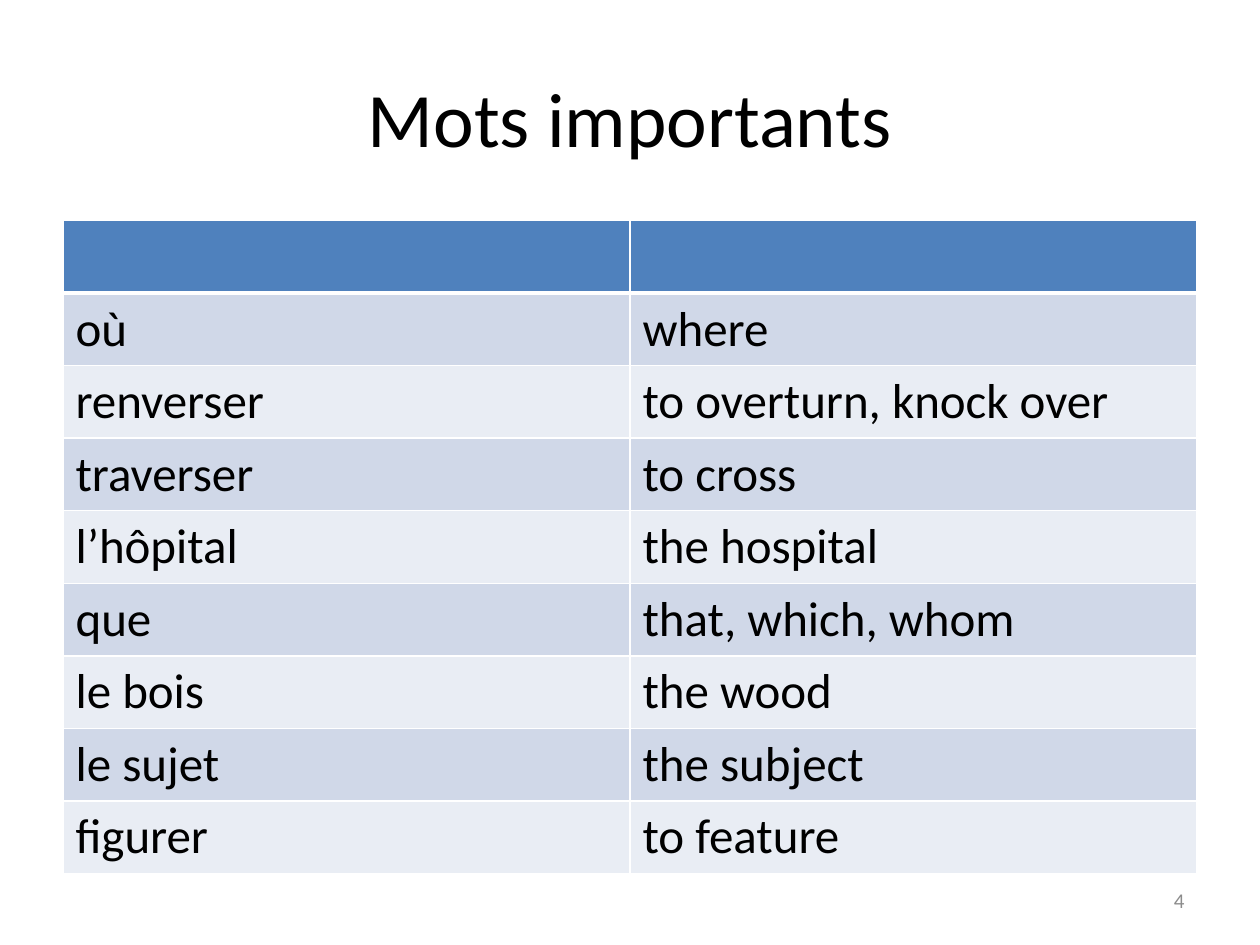
from lxml import etree
from pptx import Presentation, util as u
from pptx.dml.color import RGBColor
from pptx.enum import text
from pptx.oxml.ns import qn

COLORS = {
    "text": "000000",
    "number": "8C8C8C",
    "header": "4F81BD",
    "odd_row": "D0D8E8",
    "even_row": "E9EDF4",
    "border": "FFFFFF",
}
VOCABULARY = [
    ("où", "where"),
    ("renverser", "to overturn, knock over"),
    ("traverser", "to cross"),
    ("l’hôpital", "the hospital"),
    ("que", "that, which, whom"),
    ("le bois", "the wood"),
    ("le sujet", "the subject"),
    ("figurer", "to feature"),
]


class SlideBuilder:
    font = "Calibri"
    margin = 1.27
    width = 22.86
    row_height = 1.46

    def __init__(self, slide):
        self.slide = slide

    def set_text(self, text_frame, content, size, color="text", align=None):
        text_frame.text = content
        paragraph = text_frame.paragraphs[0]
        paragraph.alignment = align
        for run in paragraph.runs:
            run.font.name = self.font
            run.font.size = u.Pt(size)
            run.font.color.rgb = RGBColor.from_string(COLORS[color])

    def title(self, content):
        shape = self.slide.shapes.title
        shape.left, shape.top = u.Cm(self.margin), u.Cm(0.76)
        shape.width, shape.height = u.Cm(self.width), u.Cm(3.18)
        shape.text_frame.vertical_anchor = text.MSO_ANCHOR.MIDDLE
        self.set_text(shape.text_frame, content, 44, align=text.PP_ALIGN.CENTER)

    def borders(self, cell, bottom):
        """Draw white cell borders, 1 pt wide except for the bottom one."""
        properties = cell._tc.get_or_add_tcPr()
        widths = {"lnL": 1, "lnR": 1, "lnT": 1, "lnB": bottom}
        for index, (side, width) in enumerate(widths.items()):
            line = etree.Element(qn(f"a:{side}"), w=str(u.Pt(width)))
            fill = etree.SubElement(line, qn("a:solidFill"))
            etree.SubElement(fill, qn("a:srgbClr"), val=COLORS["border"])
            properties.insert(index, line)

    def table(self, rows, top):
        """Add a two-column table with an empty header row."""
        rows = [("", "")] + rows
        table = self.slide.shapes.add_table(
            len(rows), 2, u.Cm(self.margin), u.Cm(top),
            u.Cm(self.width), u.Cm(self.row_height * len(rows))).table
        for row_index, words in enumerate(rows):
            table.rows[row_index].height = u.Cm(self.row_height)
            color = "odd_row" if row_index % 2 else "even_row"
            if row_index == 0:
                color = "header"
            for column, word in enumerate(words):
                cell = table.cell(row_index, column)
                self.set_text(cell.text_frame, word, 28)
                cell.fill.solid()
                cell.fill.fore_color.rgb = RGBColor.from_string(COLORS[color])
                self.borders(cell, bottom=3 if row_index == 0 else 1)

    def page_number(self, number):
        shape = self.slide.shapes.add_textbox(
            u.Cm(18.2), u.Cm(17.65), u.Cm(5.93), u.Cm(1.01))
        shape.text_frame.word_wrap = True
        shape.text_frame.vertical_anchor = text.MSO_ANCHOR.MIDDLE
        self.set_text(shape.text_frame, number, 12, "number", text.PP_ALIGN.RIGHT)


def main():
    presentation = Presentation()
    presentation.slide_width, presentation.slide_height = u.Cm(25.4), u.Cm(19.05)
    title_only = presentation.slide_layouts[5]
    builder = SlideBuilder(presentation.slides.add_slide(title_only))
    builder.title("Mots importants")
    builder.table(VOCABULARY, top=4.45)
    builder.page_number("4")
    presentation.save("out.pptx")


if __name__ == "__main__":
    main()
